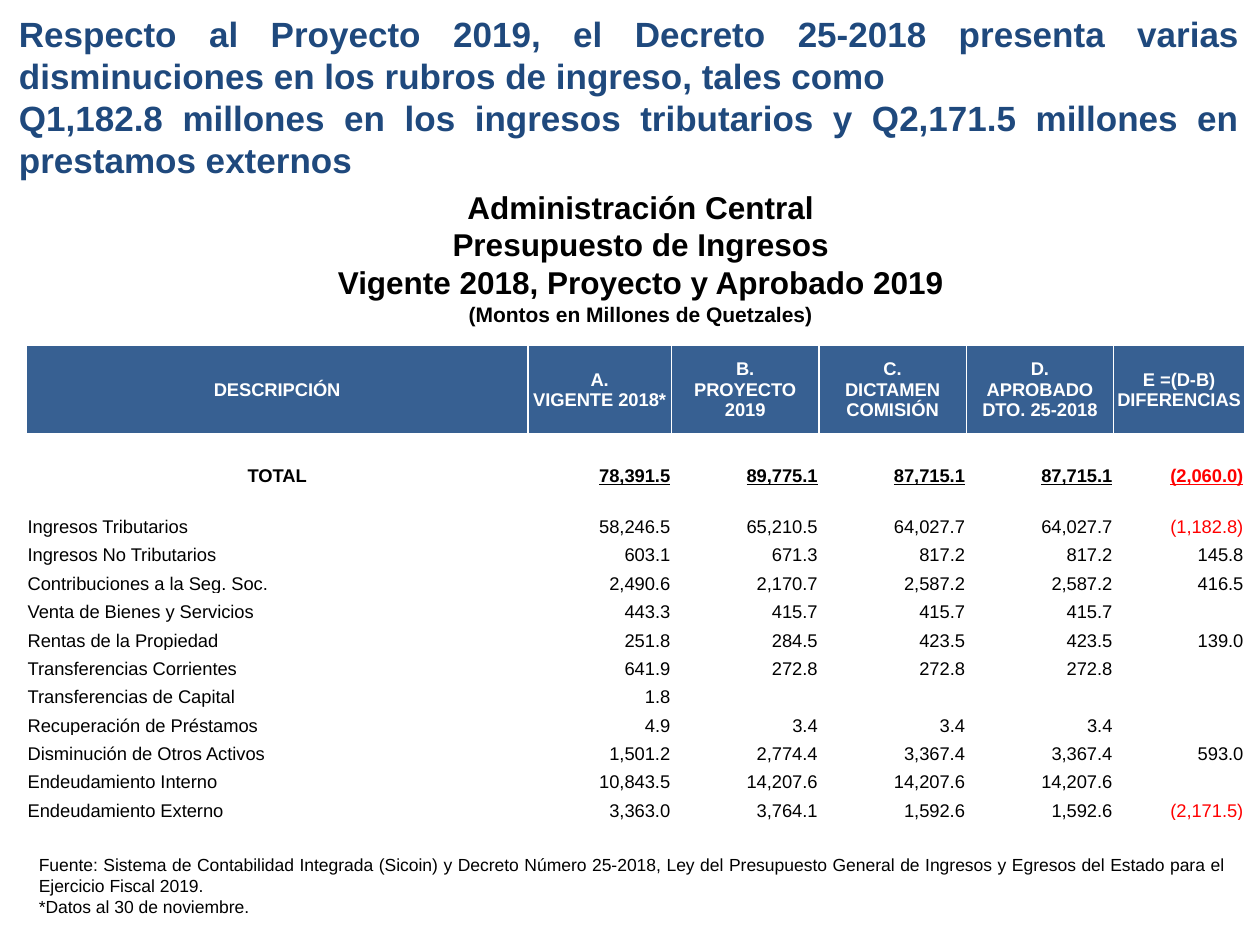
from lxml import etree
from pptx import Presentation
from pptx.dml.color import RGBColor
from pptx.enum.text import MSO_ANCHOR as Anchor, MSO_AUTO_SIZE as AutoSize, PP_ALIGN as Align
from pptx.oxml.ns import qn
from pptx.util import Inches, Pt

# Content
TITLE = [
    "Respecto al Proyecto 2019, el Decreto 25-2018 presenta varias disminuciones "
    "en los rubros de ingreso, tales como",
    "Q1,182.8 millones en los ingresos tributarios y Q2,171.5 millones en prestamos externos",
]
HEADING = [
    ("Administración Central", 18),
    ("Presupuesto de Ingresos", 18),
    ("Vigente 2018, Proyecto y Aprobado 2019", 18),
    ("(Montos en Millones de Quetzales)", 12),
]
SOURCE = [
    "Fuente: Sistema de Contabilidad Integrada (Sicoin) y Decreto Número 25-2018, Ley del "
    "Presupuesto General de Ingresos y Egresos del Estado para el Ejercicio Fiscal 2019.",
    "*Datos al 30 de noviembre.",
]
HEADER = ["DESCRIPCIÓN", "A.\vVIGENTE 2018*", "B.\vPROYECTO 2019",
          "C.\vDICTAMEN COMISIÓN", "D.\vAPROBADO\vDTO. 25-2018", "E =(D-B)\vDIFERENCIAS"]
TOTAL = ["TOTAL", "78,391.5", "89,775.1", "87,715.1", "87,715.1", "(2,060.0)"]
DETAILS = [
    ["Ingresos Tributarios", "58,246.5", "65,210.5", "64,027.7", "64,027.7", "(1,182.8)"],
    ["Ingresos No Tributarios", "603.1", "671.3", "817.2", "817.2", "145.8"],
    ["Contribuciones a la Seg. Soc.", "2,490.6", "2,170.7", "2,587.2", "2,587.2", "416.5"],
    ["Venta de Bienes y Servicios", "443.3", "415.7", "415.7", "415.7", ""],
    ["Rentas de la Propiedad", "251.8", "284.5", "423.5", "423.5", "139.0"],
    ["Transferencias Corrientes", "641.9", "272.8", "272.8", "272.8", ""],
    ["Transferencias de Capital", "1.8", "", "", "", ""],
    ["Recuperación de Préstamos", "4.9", "3.4", "3.4", "3.4", ""],
    ["Disminución de Otros Activos", "1,501.2", "2,774.4", "3,367.4", "3,367.4", "593.0"],
    ["Endeudamiento Interno", "10,843.5", "14,207.6", "14,207.6", "14,207.6", ""],
    ["Endeudamiento Externo", "3,363.0", "3,764.1", "1,592.6", "1,592.6", "(2,171.5)"],
]
BLANK = [""] * len(HEADER)

# Style
COLORS = {"title": "1F497D", "header": "376092", "text": "000000",
          "negative": "FF0000", "white": "FFFFFF"}
FONT = "Arial"
COLUMN_WIDTHS = [3.98, 1.14, 1.17, 1.17, 1.17, 1.04]
DETAIL_HEIGHT = 2.48 / len(DETAILS)

# Row kind, height in inches, cell texts
ROWS = [("header", 0.7, HEADER), ("blank", 0.2, BLANK), ("total", 0.22, TOTAL),
        ("blank", 0.18, BLANK)]
ROWS += [("detail", DETAIL_HEIGHT, texts) for texts in DETAILS]
ROWS += [("blank", 0.2, BLANK)]


def style(paragraph, size, color="text", bold=False, align=Align.LEFT):
    paragraph.alignment = align
    font = paragraph.font
    font.name, font.size, font.bold = FONT, Pt(size), bold
    font.color.rgb = RGBColor.from_string(COLORS[color])


def fill_text(shape, lines, color, bold, align, anchor):
    """Write (text, size) lines into a shape, one paragraph each."""
    frame = shape.text_frame
    frame.word_wrap = True
    frame.auto_size = AutoSize.NONE
    frame.vertical_anchor = anchor
    frame.text = "\n".join(text for text, _ in lines)
    for paragraph, (_, size) in zip(frame.paragraphs, lines):
        style(paragraph, size, color, bold, align)


def place(shape, left, top, width, height):
    shape.left, shape.top = Inches(left), Inches(top)
    shape.width, shape.height = Inches(width), Inches(height)


def add_borders(cell):
    properties = cell._tc.get_or_add_tcPr()
    for side in ("a:lnL", "a:lnR", "a:lnT", "a:lnB"):
        line = etree.SubElement(properties, qn(side), w=str(Pt(1)))
        fill = etree.SubElement(line, qn("a:solidFill"))
        etree.SubElement(fill, qn("a:srgbClr"), val=COLORS["white"])


def fill_cell(cell, kind, column, text):
    is_header = kind == "header"
    cell.margin_left = cell.margin_right = cell.margin_top = Inches(0.01)
    cell.margin_bottom = 0
    cell.vertical_anchor = Anchor.MIDDLE if is_header else Anchor.BOTTOM
    add_borders(cell)
    cell.fill.solid()
    cell.fill.fore_color.rgb = RGBColor.from_string(COLORS["header" if is_header else "white"])

    paragraph = cell.text_frame.paragraphs[0]
    if not text:
        # Keep empty cells from stretching their row
        etree.SubElement(paragraph._p, qn("a:endParaRPr"), sz="1000")
        return
    paragraph.text = text
    if is_header or text == "TOTAL":
        align = Align.CENTER
    else:
        align = Align.RIGHT if column else Align.LEFT
    color = "white" if is_header else "negative" if text.startswith("(") else "text"
    style(paragraph, 10.5, color, kind != "detail", align)
    if kind == "total" and column:
        paragraph.font.underline = True


def add_budget_table(slide):
    frame = slide.shapes.add_table(
        len(ROWS), len(HEADER), Inches(0.21), Inches(2.74),
        Inches(sum(COLUMN_WIDTHS)), Inches(sum(height for _, height, _ in ROWS)))
    table = frame.table
    table.horz_banding = False
    for column, width in zip(table.columns, COLUMN_WIDTHS):
        column.width = Inches(width)
    for row, (kind, height, texts) in zip(table.rows, ROWS):
        row.height = Inches(height)
        for column, (cell, text) in enumerate(zip(row.cells, texts)):
            fill_cell(cell, kind, column, text)


def main():
    presentation = Presentation()
    presentation.slide_width, presentation.slide_height = Inches(10), Inches(7.5)
    slide = presentation.slides.add_slide(presentation.slide_layouts[5])

    # Title
    title = slide.shapes.title
    place(title, 0.05, 0.41, 9.89, 0.71)
    fill_text(title, [(text, 20) for text in TITLE], "title", True, Align.JUSTIFY, Anchor.MIDDLE)

    # Table heading
    heading = slide.shapes.add_textbox(Inches(0.87), Inches(1.44), Inches(8.43), Inches(1.21))
    fill_text(heading, HEADING, "text", True, Align.CENTER, Anchor.TOP)

    add_budget_table(slide)

    # Source note
    note = slide.shapes.add_textbox(Inches(0.21), Inches(6.85), Inches(9.6), Inches(0.36))
    fill_text(note, [(text, 10) for text in SOURCE], "text", False, Align.JUSTIFY, Anchor.MIDDLE)

    presentation.save("out.pptx")


if __name__ == "__main__":
    main()
